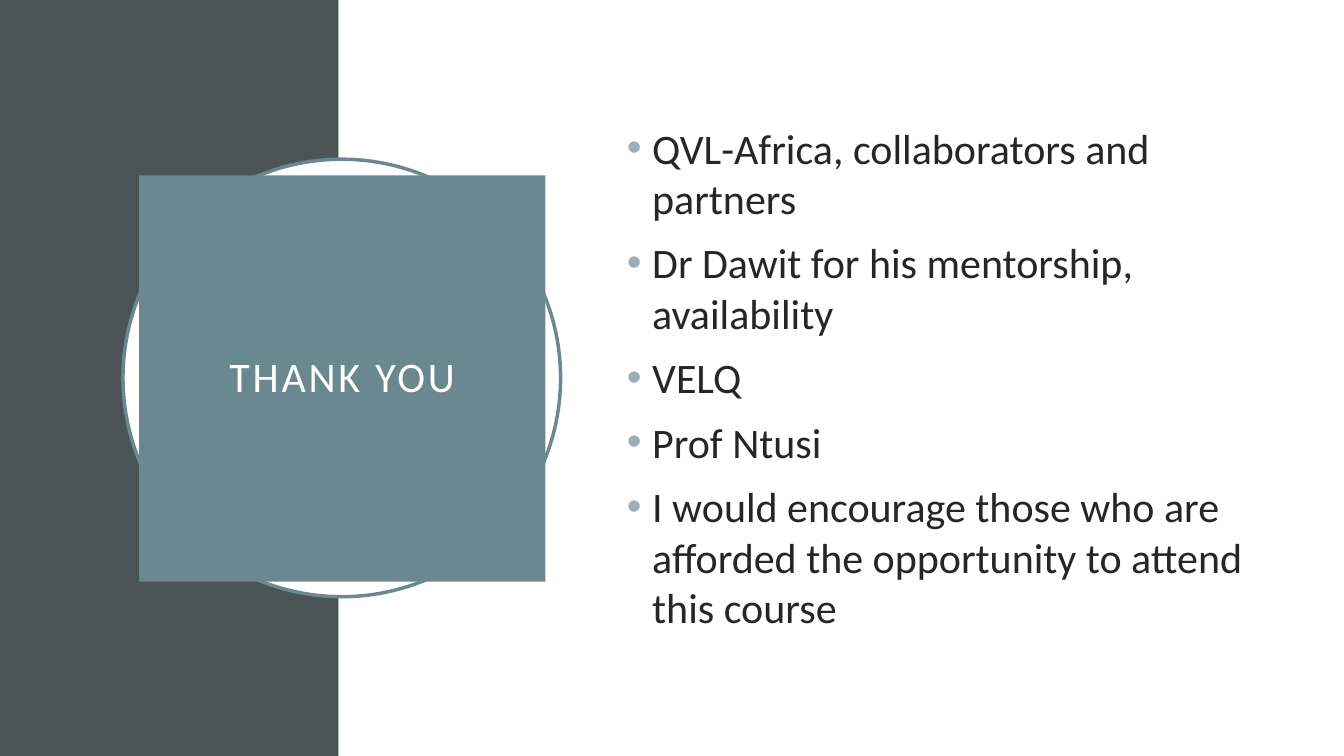
from dataclasses import dataclass

from lxml import etree
from pptx import Presentation
from pptx.dml.color import RGBColor
from pptx.enum import shapes, text
from pptx.oxml import ns
from pptx.util import Inches, Pt


@dataclass(frozen=True)
class Theme:
    slate: str = "4A5356"
    teal: str = "6B8891"
    bullet: str = "9BAFB5"
    ink: str = "262626"
    white: str = "FFFFFF"
    font: str = "Calibri"
    size: float = 30
    tracking: float = 2
    outline: float = 2.5


@dataclass(frozen=True)
class Box:
    left: float
    top: float
    width: float
    height: float

    def lengths(self):
        return [Inches(v) for v in (self.left, self.top, self.width, self.height)]


@dataclass(frozen=True)
class Backdrop:
    kind: shapes.MSO_SHAPE
    box: Box
    fill: str
    line: str | None = None


THEME = Theme()
TITLE_BOX = Box(1.38, 1.74, 4.03, 4.03)
THANKS_BOX = Box(6.12, 0.5, 6.58, 6.48)
BACKDROPS = [
    Backdrop(shapes.MSO_SHAPE.RECTANGLE, Box(0, 0, 3.36, 7.5), THEME.slate),
    Backdrop(shapes.MSO_SHAPE.RECTANGLE, Box(3.36, 0, 9.97, 7.5), THEME.white),
    Backdrop(shapes.MSO_SHAPE.OVAL, Box(1.22, 1.58, 4.34, 4.34), THEME.white, THEME.teal),
]
THANKS = [
    "QVL-Africa, collaborators and partners",
    "Dr Dawit for his mentorship, availability",
    "VELQ",
    "Prof Ntusi",
    "I would encourage those who are afforded the opportunity to attend this course",
]


def rgb(color: str) -> RGBColor:
    return RGBColor.from_string(color)


def draw_backdrop(slide, backdrop: Backdrop) -> None:
    shape = slide.shapes.add_shape(backdrop.kind, *backdrop.box.lengths())
    shape.shadow.inherit = False
    shape.fill.solid()
    shape.fill.fore_color.rgb = rgb(backdrop.fill)
    if backdrop.line:
        shape.line.color.rgb = rgb(backdrop.line)
        shape.line.width = Pt(THEME.outline)
    else:
        shape.line.fill.background()


def add_bullet(paragraph, color: str, indent: float) -> None:
    props = paragraph._p.get_or_add_pPr()
    props.set("marL", str(Inches(indent)))
    props.set("indent", str(-Inches(indent)))
    bullet_color = etree.SubElement(props, ns.qn("a:buClr"))
    etree.SubElement(bullet_color, ns.qn("a:srgbClr"), val=color)
    etree.SubElement(props, ns.qn("a:buFont"), typeface="Arial")
    etree.SubElement(props, ns.qn("a:buChar"), char="•")


def write(shape, lines: list[str], *, color: str, align=text.PP_ALIGN.LEFT,
          line_spacing: float = 1.0, space_before: float = 0, inset: float | None = None,
          tracking: float = 0, bullet: str | None = None) -> None:
    """Fill a shape with one paragraph per line, centred vertically."""
    frame = shape.text_frame
    frame.word_wrap = True
    frame.auto_size = text.MSO_AUTO_SIZE.NONE
    frame.vertical_anchor = text.MSO_ANCHOR.MIDDLE
    if inset is not None:
        frame.margin_left = frame.margin_right = Inches(inset)
        frame.margin_top = frame.margin_bottom = Inches(inset)
    frame.text = "\n".join(lines)
    for paragraph in frame.paragraphs:
        paragraph.alignment = align
        paragraph.line_spacing = line_spacing
        paragraph.space_before = Pt(space_before)
        if bullet:
            add_bullet(paragraph, bullet, 0.25)
        for run in paragraph.runs:
            run.font.name = THEME.font
            run.font.size = Pt(THEME.size)
            run.font.color.rgb = rgb(color)
            if tracking:
                run._r.get_or_add_rPr().set("spc", str(int(tracking * 100)))


def main() -> None:
    deck = Presentation()
    deck.slide_width, deck.slide_height = Inches(13.33), Inches(7.5)
    slide = deck.slides.add_slide(deck.slide_layouts[5])

    for backdrop in BACKDROPS:
        draw_backdrop(slide, backdrop)

    title = slide.shapes.title
    slide.shapes._spTree.append(title._element)  # in front of the backdrops
    title.left, title.top, title.width, title.height = TITLE_BOX.lengths()
    title.fill.solid()
    title.fill.fore_color.rgb = rgb(THEME.teal)
    write(title, ["THANK YOU"], color=THEME.white, align=text.PP_ALIGN.CENTER,
          line_spacing=0.9, inset=0.2, tracking=THEME.tracking)

    thanks = slide.shapes.add_textbox(*THANKS_BOX.lengths())
    write(thanks, THANKS, color=THEME.ink, space_before=10, bullet=THEME.bullet)

    deck.save("out.pptx")


if __name__ == "__main__":
    main()
